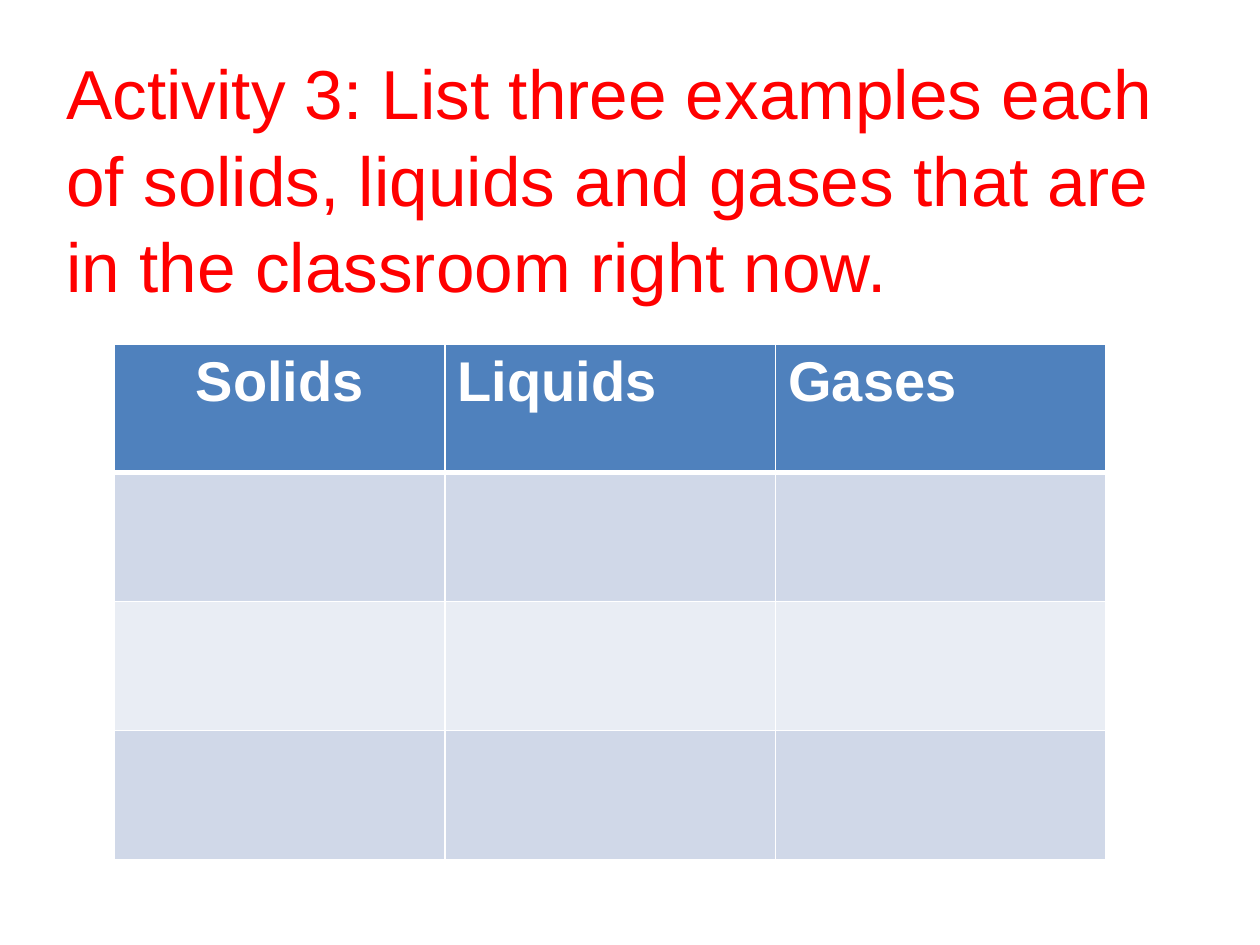
from lxml import etree
from pptx import Presentation
from pptx.dml.color import RGBColor
from pptx.enum.text import MSO_ANCHOR, PP_ALIGN
from pptx.oxml.ns import qn
from pptx.util import Inches, Pt

FONT = "Arial"
HEADINGS = ["Solids", "Liquids", "Gases"]
ROW_FILLS = ["4F81BD", "D0D8E8", "E9EDF4", "D0D8E8"]


def color(hex_text):
    return RGBColor.from_string(hex_text)


def add_run(p, text, size, hex_text, bold=False):
    r = p.add_run()
    r.text = text
    r.font.name = FONT
    r.font.size = Pt(size)
    r.font.bold = bold
    r.font.color.rgb = color(hex_text)


def set_borders(cell, bottom=1, top=1):
    """Draw white cell borders, with widths in points."""
    tc_pr = cell._tc.get_or_add_tcPr()
    widths = {"a:lnL": 1, "a:lnR": 1, "a:lnT": top, "a:lnB": bottom}
    for i, (tag, width) in enumerate(widths.items()):
        ln = etree.Element(qn(tag), w=str(Pt(width)))
        fill = etree.SubElement(ln, qn("a:solidFill"))
        etree.SubElement(fill, qn("a:srgbClr"), val="FFFFFF")
        tc_pr.insert(i, ln)


def add_title(s, left, top, width, height):
    tf = s.shapes.add_textbox(left, top, width, height).text_frame
    tf.word_wrap = True
    tf.vertical_anchor = MSO_ANCHOR.MIDDLE
    p = tf.paragraphs[0]
    p.line_spacing = 1.04
    add_run(p, "Activity 3: List three examples each of solids, liquids "
               "and gases that are in the classroom right now.", 39.6, "FF0000")


def add_examples_table(s, left, top, width, height):
    table = s.shapes.add_table(len(ROW_FILLS), len(HEADINGS),
                               left, top, width, height).table
    for row, fill in enumerate(ROW_FILLS):
        for col in range(len(HEADINGS)):
            cell = table.cell(row, col)
            cell.fill.solid()
            cell.fill.fore_color.rgb = color(fill)
            set_borders(cell, bottom=3 if row == 0 else 1,
                        top=3 if row == 1 else 1)
    for col, heading in enumerate(HEADINGS):
        add_run(table.cell(0, col).text_frame.paragraphs[0],
                heading, 32, "FFFFFF", bold=True)
    table.cell(0, 0).text_frame.paragraphs[0].alignment = PP_ALIGN.CENTER


def main():
    prs = Presentation()
    prs.slide_width, prs.slide_height = Inches(10), Inches(7.5)
    s = prs.slides.add_slide(prs.slide_layouts[6])
    add_title(s, Inches(0.43), Inches(0.6), Inches(9.13), Inches(1.61))
    add_examples_table(s, Inches(0.91), Inches(2.73), Inches(7.87), Inches(4.09))
    prs.save("out.pptx")


if __name__ == "__main__":
    main()
